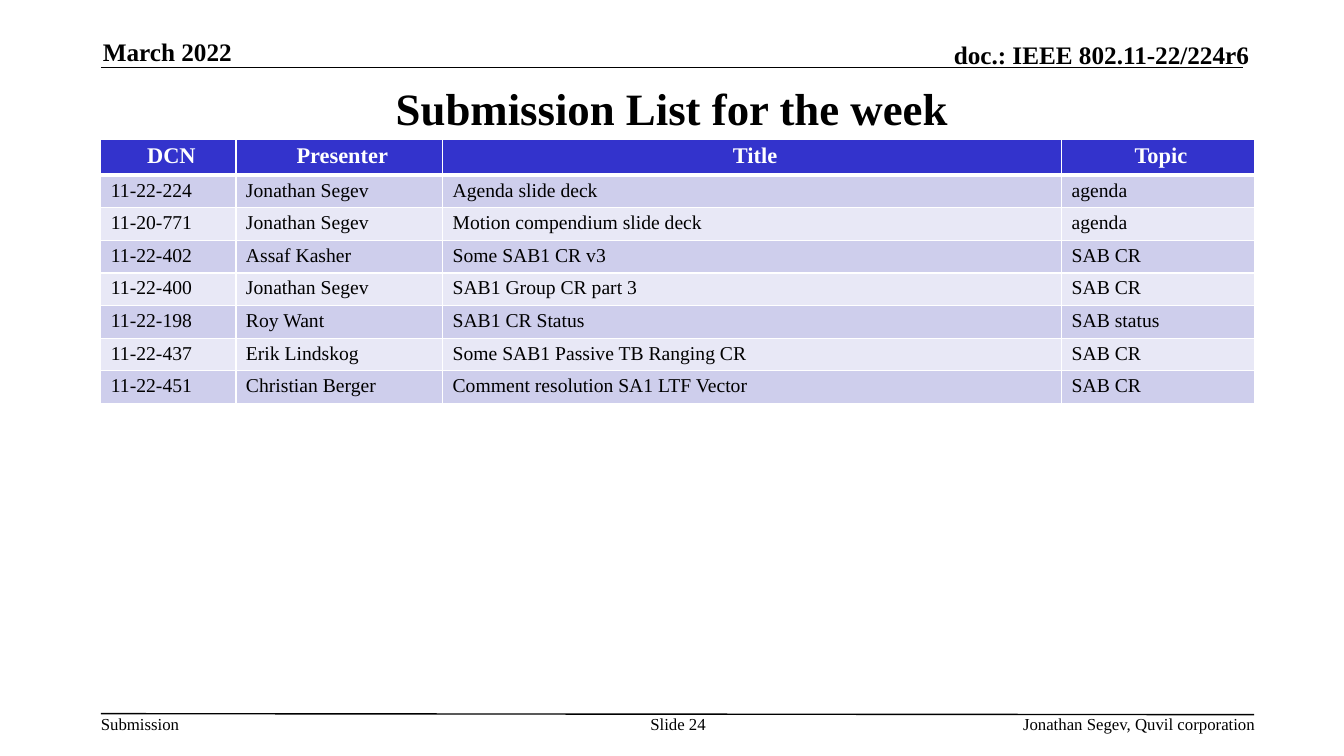
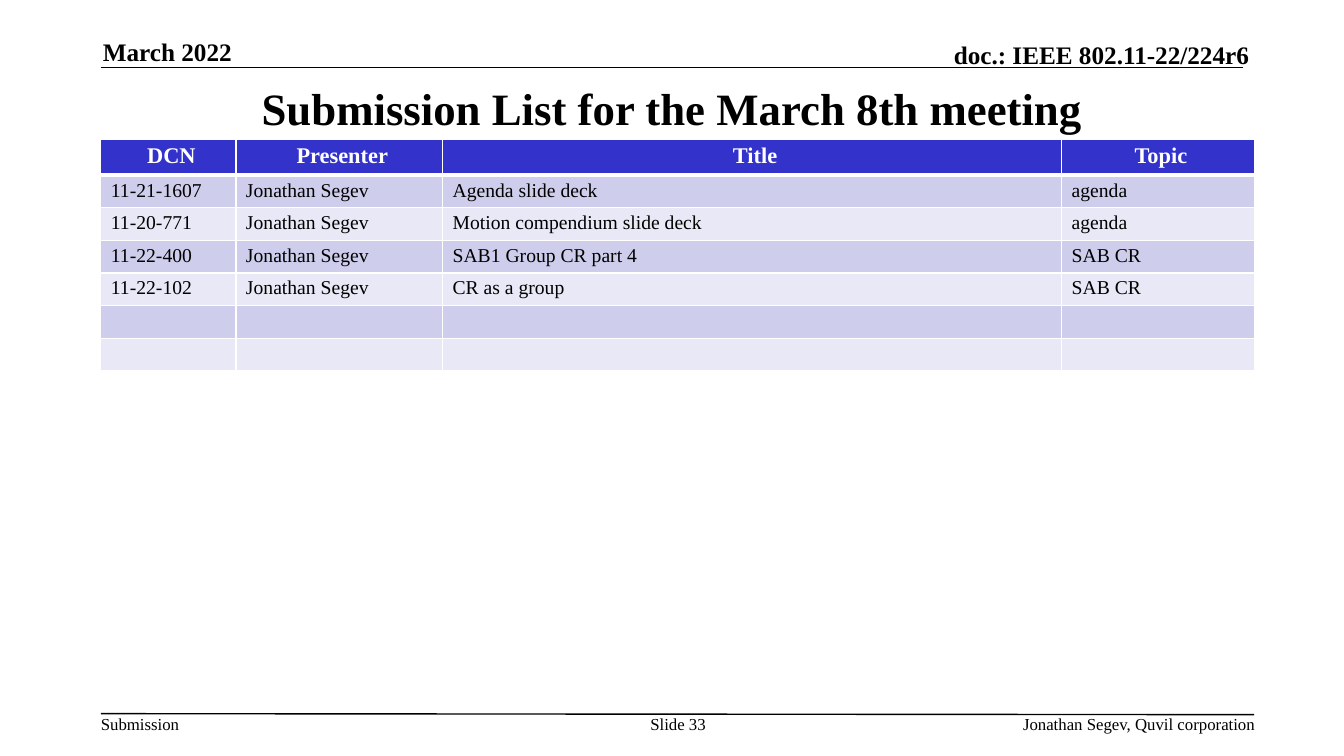
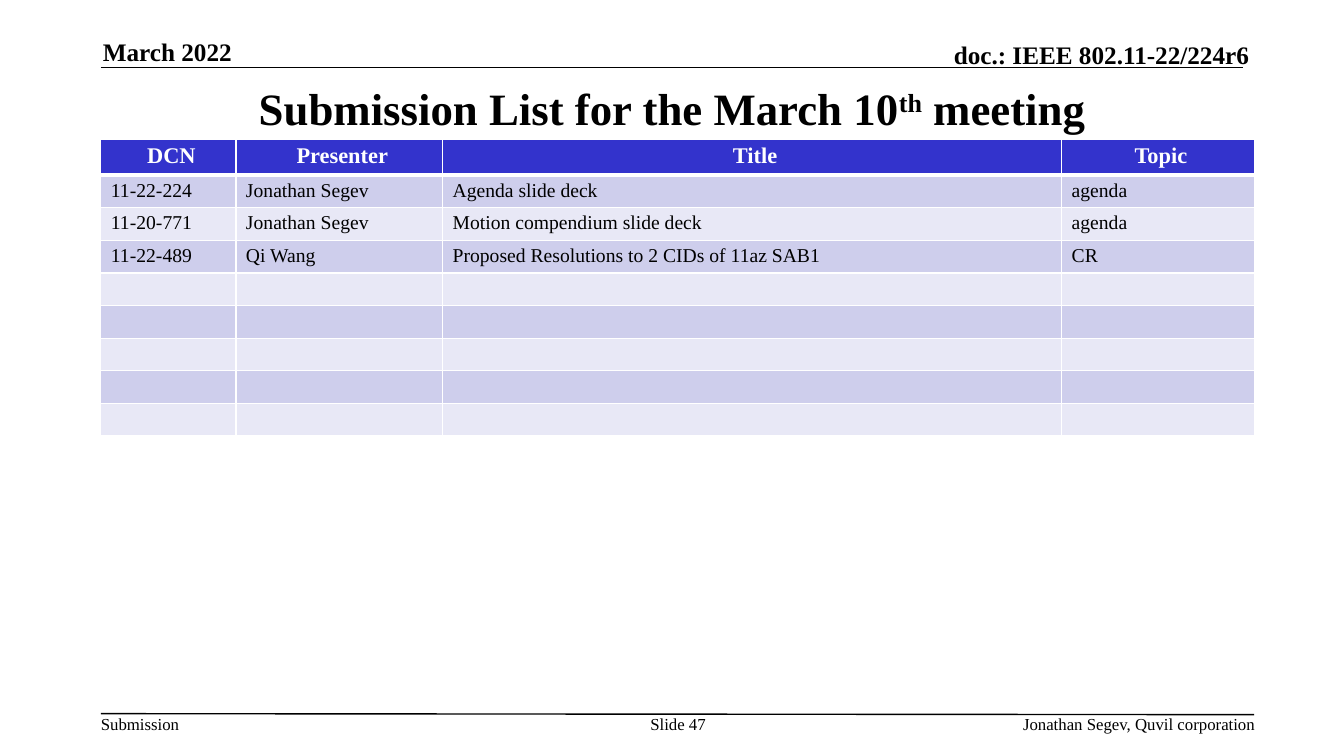
from lxml.etree import SubElement
from pptx import Presentation
from pptx.dml.color import RGBColor
from pptx.enum.shapes import MSO_CONNECTOR
from pptx.enum.text import MSO_ANCHOR, MSO_AUTO_SIZE, PP_ALIGN
from pptx.oxml import parse_xml
from pptx.oxml.ns import nsdecls, qn
from pptx.util import Inches, Pt

FONT = "Times New Roman"
BLACK = RGBColor(0x00, 0x00, 0x00)
WHITE = RGBColor(0xFF, 0xFF, 0xFF)
BLUE = RGBColor(0x33, 0x33, 0xCC)
BANDS = (RGBColor(0xCE, 0xCE, 0xEC), RGBColor(0xE8, 0xE8, 0xF6))

WIDTH, HEIGHT = 13.33, 7.5
LEFT = 1.0
COLS = (1.34, 2.05, 6.14, 1.91)
HEAD_ROW, BODY_ROW = 0.35, 0.31
HEADS = ("DCN", "Presenter", "Title", "Topic")

AGENDA = ("11-22-224", "Jonathan Segev", "Agenda slide deck", "agenda")
MOTIONS = ("11-20-771", "Jonathan Segev", "Motion compendium slide deck", "agenda")
BLANK = ("",) * len(COLS)

# Each entry: slide number, title runs as (text, raised), table rows
LISTS = (
    (24, [("Submission List for the week", False)], [
        AGENDA,
        MOTIONS,
        ("11-22-402", "Assaf Kasher", "Some SAB1 CR v3", "SAB CR"),
        ("11-22-400", "Jonathan Segev", "SAB1 Group CR part 3", "SAB CR"),
        ("11-22-198", "Roy Want", "SAB1 CR Status", "SAB status"),
        ("11-22-437", "Erik Lindskog", "Some SAB1 Passive TB Ranging CR", "SAB CR"),
        ("11-22-451", "Christian Berger", "Comment resolution SA1 LTF Vector", "SAB CR"),
    ]),
    (33, [("Submission List for the March 8th meeting", False)], [
        ("11-21-1607",) + AGENDA[1:],
        MOTIONS,
        ("11-22-400", "Jonathan Segev", "SAB1 Group CR part 4", "SAB CR"),
        ("11-22-102", "Jonathan Segev", "CR as a group", "SAB CR"),
    ] + [BLANK] * 2),
    (47, [("Submission List for the March 10", False), ("th", True),
          (" meeting", False)], [
        AGENDA,
        MOTIONS,
        ("11-22-489", "Qi Wang", "Proposed Resolutions to 2 CIDs of 11az SAB1", "CR"),
    ] + [BLANK] * 5),
)


def add_run(para, text, size, color=BLACK, bold=False):
    run = para.add_run()
    run.text = text
    font = run.font
    font.name, font.size, font.bold = FONT, Pt(size), bold
    font.color.rgb = color
    return run


def add_label(slide, box, text, size, align=PP_ALIGN.LEFT, bold=False,
              anchor=MSO_ANCHOR.TOP):
    frame = slide.shapes.add_textbox(*map(Inches, box)).text_frame
    frame.word_wrap = True
    frame.vertical_anchor = anchor
    frame.margin_left = frame.margin_right = 0
    frame.margin_top = frame.margin_bottom = 0
    para = frame.paragraphs[0]
    para.alignment = align
    add_run(para, text, size, bold=bold)


def add_rule(slide, *ends):
    line = slide.shapes.add_connector(MSO_CONNECTOR.STRAIGHT, *map(Inches, ends))
    line.line.color.rgb = BLACK
    line.line.width = Pt(1)
    SubElement(line._element.spPr, qn("a:effectLst"))


def add_header(slide):
    add_rule(slide, LEFT, 0.67, 12.33, 0.67)
    add_label(slide, (7.29, 0.39, 5.1, 0.3), "doc.: IEEE 802.11-22/224r6", 18,
              PP_ALIGN.RIGHT, True, MSO_ANCHOR.BOTTOM)
    add_label(slide, (1.02, 0.36, 2.73, 0.3), "March 2022", 18,
              bold=True, anchor=MSO_ANCHOR.BOTTOM)


def add_footer(slide, number, top=7.08):
    add_rule(slide, LEFT, top, LEFT + sum(COLS), top + 0.01)
    add_label(slide, (LEFT, top, 0.79, 0.2), "Submission", 12)
    add_label(slide, (6.34, top, 0.77, 0.4), f"Slide {number}", 12, PP_ALIGN.CENTER)
    add_label(slide, (7.81, top, 4.64, 0.2), "Jonathan Segev, Quvil corporation",
              12, PP_ALIGN.RIGHT)


def set_title(slide, box, parts):
    title = slide.shapes.title
    title.left, title.top, title.width, title.height = map(Inches, box)
    frame = title.text_frame
    frame.word_wrap = True
    frame.auto_size = MSO_AUTO_SIZE.NONE
    frame.vertical_anchor = MSO_ANCHOR.MIDDLE
    para = frame.paragraphs[0]
    para.alignment = PP_ALIGN.CENTER
    for text, raised in parts:
        run = add_run(para, text, 32, bold=True)
        if raised:
            run.font._element.set("baseline", "30000")


def set_borders(cell, top, bottom):
    """Give the cell white edges; widths in points, sides always 1."""
    props = cell._tc.get_or_add_tcPr()
    for spot, (side, width) in enumerate(
            (("L", 1), ("R", 1), ("T", top), ("B", bottom))):
        props.insert(spot, parse_xml(
            f'<a:ln{side} {nsdecls("a")} w="{Pt(width)}"><a:solidFill>'
            f'<a:srgbClr val="{WHITE}"/></a:solidFill></a:ln{side}>'))


def fill_cell(cell, text, row):
    head = row == 0
    size = 16 if head else 14
    cell.fill.solid()
    cell.fill.fore_color.rgb = BLUE if head else BANDS[(row - 1) % 2]
    set_borders(cell, 3 if row == 1 else 1, 3 if head else 1)
    cell.margin_left = Inches(0.1)
    cell.margin_right = Inches(0.04 if head else 0.1)
    cell.margin_top = cell.margin_bottom = Pt(3.25)
    para = cell.text_frame.paragraphs[0]
    para.alignment = PP_ALIGN.CENTER if head else PP_ALIGN.LEFT
    if text:
        add_run(para, text, size, WHITE if head else BLACK, head)
    else:
        SubElement(para._p, qn("a:endParaRPr"), sz=str(size * 100))


def add_list(slide, left, top, rows):
    high = HEAD_ROW + BODY_ROW * len(rows)
    table = slide.shapes.add_table(
        len(rows) + 1, len(COLS), Inches(left), Inches(top),
        Inches(sum(COLS)), Inches(high)).table
    for col, width in zip(table.columns, COLS):
        col.width = Inches(width)
    for r, texts in enumerate([HEADS, *rows]):
        table.rows[r].height = Inches(BODY_ROW if r else HEAD_ROW)
        for c, text in enumerate(texts):
            fill_cell(table.cell(r, c), text, r)


def add_slide(deck, number, title, rows):
    slide = deck.slides.add_slide(deck.slide_layouts[5])
    add_header(slide)
    set_title(slide, (LEFT, 0.75, 11.33, 0.64), title)
    add_list(slide, LEFT, 1.38, rows)
    add_footer(slide, number)


def main():
    deck = Presentation()
    deck.slide_width, deck.slide_height = Inches(WIDTH), Inches(HEIGHT)
    for entry in LISTS:
        add_slide(deck, *entry)
    deck.save("out.pptx")


if __name__ == "__main__":
    main()
